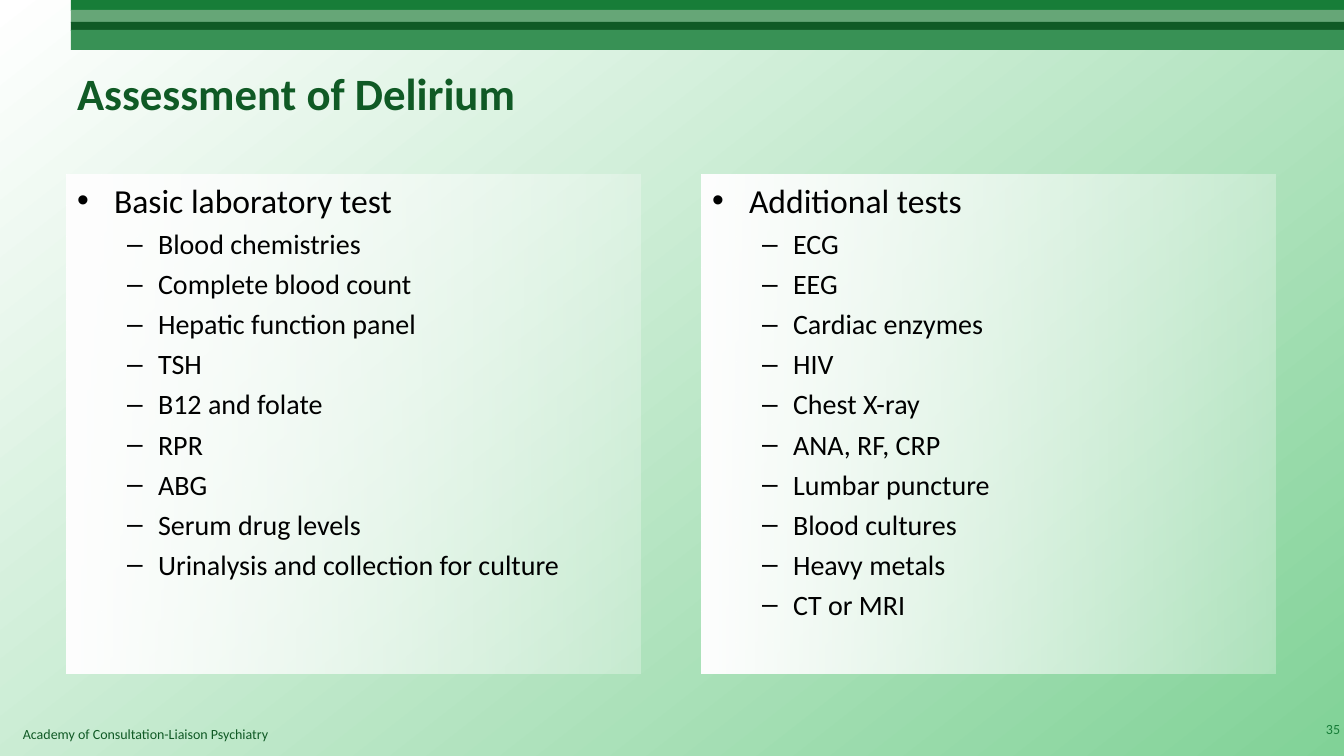
from dataclasses import dataclass

from lxml import etree
from pptx import Presentation
from pptx.dml.color import RGBColor
from pptx.dml.fill import FillFormat
from pptx.enum.shapes import MSO_SHAPE
from pptx.enum.text import MSO_ANCHOR, MSO_AUTO_SIZE, PP_ALIGN
from pptx.oxml.ns import qn
from pptx.shapes.base import BaseShape
from pptx.slide import Slide
from pptx.text.text import TextFrame
from pptx.util import Emu, Pt

RECTANGLE = MSO_SHAPE.RECTANGLE
TOP, MIDDLE = MSO_ANCHOR.TOP, MSO_ANCHOR.MIDDLE
LEFT, RIGHT = PP_ALIGN.LEFT, PP_ALIGN.RIGHT
NO_AUTOFIT = MSO_AUTO_SIZE.NONE
EMU_PER_PX = 914400 / 100.8
TWO_CONTENT_LAYOUT = 3


@dataclass(frozen=True)
class Theme:
    font: str = "Calibri"
    dark_green: str = "105A25"
    green: str = "177D38"
    pale_green: str = "66A677"
    mid_green: str = "389155"
    corner_green: str = "81D297"
    white: str = "FFFFFF"
    black: str = "000000"
    title_size: int = 32
    heading_size: int = 24
    item_size: int = 20
    small_size: int = 10


THEME = Theme()


@dataclass(frozen=True)
class Band:
    top: int
    height: int
    color: str


@dataclass(frozen=True)
class Level:
    bullet: str
    size: int
    margin: int
    hanging: int
    space_before: float


@dataclass(frozen=True)
class Panel:
    placeholder: int
    left: int
    heading: str
    items: tuple[str, ...]


@dataclass(frozen=True)
class Label:
    text: str
    left: int
    top: int
    width: int
    height: int
    color: str
    align: PP_ALIGN
    anchor: MSO_ANCHOR


BANDS = (
    Band(0, 11, THEME.green),
    Band(10, 13, THEME.pale_green),
    Band(22, 9, THEME.dark_green),
    Band(30, 20, THEME.mid_green),
)
HEADING = Level("•", THEME.heading_size, 37, 37, 0)
ITEM = Level("–", THEME.item_size, 81, 31, 4.6)
PANELS = (
    Panel(1, 67, "Basic laboratory test", (
        "Blood chemistries", "Complete blood count", "Hepatic function panel",
        "TSH", "B12 and folate", "RPR", "ABG", "Serum drug levels",
        "Urinalysis and collection for culture")),
    Panel(2, 702, "Additional tests", (
        "ECG", "EEG", "Cardiac enzymes", "HIV", "Chest X-ray", "ANA, RF, CRP",
        "Lumbar puncture", "Blood cultures", "Heavy metals", "CT or MRI")),
)
LABELS = (
    Label("Academy of Consultation-Liaison Psychiatry",
          13, 721, 932, 27, THEME.dark_green, LEFT, TOP),
    Label("35", 1297, 709, 53, 40, THEME.green, RIGHT, MIDDLE),
)


def px(length: int) -> Emu:
    return Emu(round(length * EMU_PER_PX))


def place(shape: BaseShape, left: int, top: int, width: int, height: int) -> None:
    shape.left, shape.top = px(left), px(top)
    shape.width, shape.height = px(width), px(height)


def set_gradient(fill: FillFormat, start: str, end: str, clockwise: int) -> None:
    fill.gradient()
    fill.gradient_angle = -clockwise % 360
    for stop, color in zip(fill.gradient_stops, (start, end)):
        stop.color.rgb = RGBColor.from_string(color)


def style_paragraph(para, size: int, color: str, bold: bool = False) -> None:
    para.font.name = THEME.font
    para.font.size = Pt(size)
    para.font.bold = bold
    para.font.color.rgb = RGBColor.from_string(color)


def add_bands(page: Slide) -> None:
    for band in BANDS:
        bar = page.shapes.add_shape(
            RECTANGLE, px(71), px(band.top), px(1273), px(band.height))
        bar.shadow.inherit = False
        bar.fill.solid()
        bar.fill.fore_color.rgb = RGBColor.from_string(band.color)
        bar.line.fill.background()


def fill_title(page: Slide) -> None:
    title = page.shapes.title
    place(title, 67, 30, 1210, 126)
    frame = title.text_frame
    frame.text = "Assessment of Delirium"
    frame.auto_size = NO_AUTOFIT
    frame.vertical_anchor = MIDDLE
    frame.paragraphs[0].alignment = LEFT
    style_paragraph(frame.paragraphs[0], THEME.title_size, THEME.dark_green, True)


def write_line(frame: TextFrame, index: int, text: str, level: Level) -> None:
    para = frame.add_paragraph() if index else frame.paragraphs[0]
    para.text = text
    para.level = 1 if level is ITEM else 0
    para.space_before = Pt(level.space_before)
    props = para._p.get_or_add_pPr()
    props.set("marL", str(px(level.margin)))
    props.set("indent", str(-px(level.hanging)))
    bullet_color = etree.SubElement(props, qn("a:buClr"))
    etree.SubElement(bullet_color, qn("a:srgbClr"), val=THEME.black)
    etree.SubElement(props, qn("a:buChar"), char=level.bullet)
    style_paragraph(para, level.size, THEME.black)


def fill_panel(page: Slide, panel: Panel) -> None:
    body = page.placeholders[panel.placeholder]
    place(body, panel.left, 175, 574, 499)
    set_gradient(body.fill, THEME.white, THEME.white, 0)
    # The right edge of the panel is 30 % opaque
    last_color = body._element.spPr.findall(".//" + qn("a:srgbClr"))[-1]
    etree.SubElement(last_color, qn("a:alpha"), val="30000")
    frame = body.text_frame
    frame.auto_size = NO_AUTOFIT
    write_line(frame, 0, panel.heading, HEADING)
    for index, item in enumerate(panel.items, start=1):
        write_line(frame, index, item, ITEM)


def add_label(page: Slide, label: Label) -> None:
    box = page.shapes.add_textbox(
        px(label.left), px(label.top), px(label.width), px(label.height))
    frame = box.text_frame
    frame.word_wrap = True
    frame.vertical_anchor = label.anchor
    frame.text = label.text
    frame.paragraphs[0].alignment = label.align
    style_paragraph(frame.paragraphs[0], THEME.small_size, label.color)


def main() -> None:
    deck = Presentation()
    deck.slide_width, deck.slide_height = px(1344), px(756)
    page = deck.slides.add_slide(deck.slide_layouts[TWO_CONTENT_LAYOUT])
    set_gradient(page.background.fill, THEME.white, THEME.corner_green, 52)
    # Header
    add_bands(page)
    fill_title(page)
    # Test lists
    for panel in PANELS:
        fill_panel(page, panel)
    # Footer and page number
    for label in LABELS:
        add_label(page, label)
    deck.save("out.pptx")


if __name__ == "__main__":
    main()
